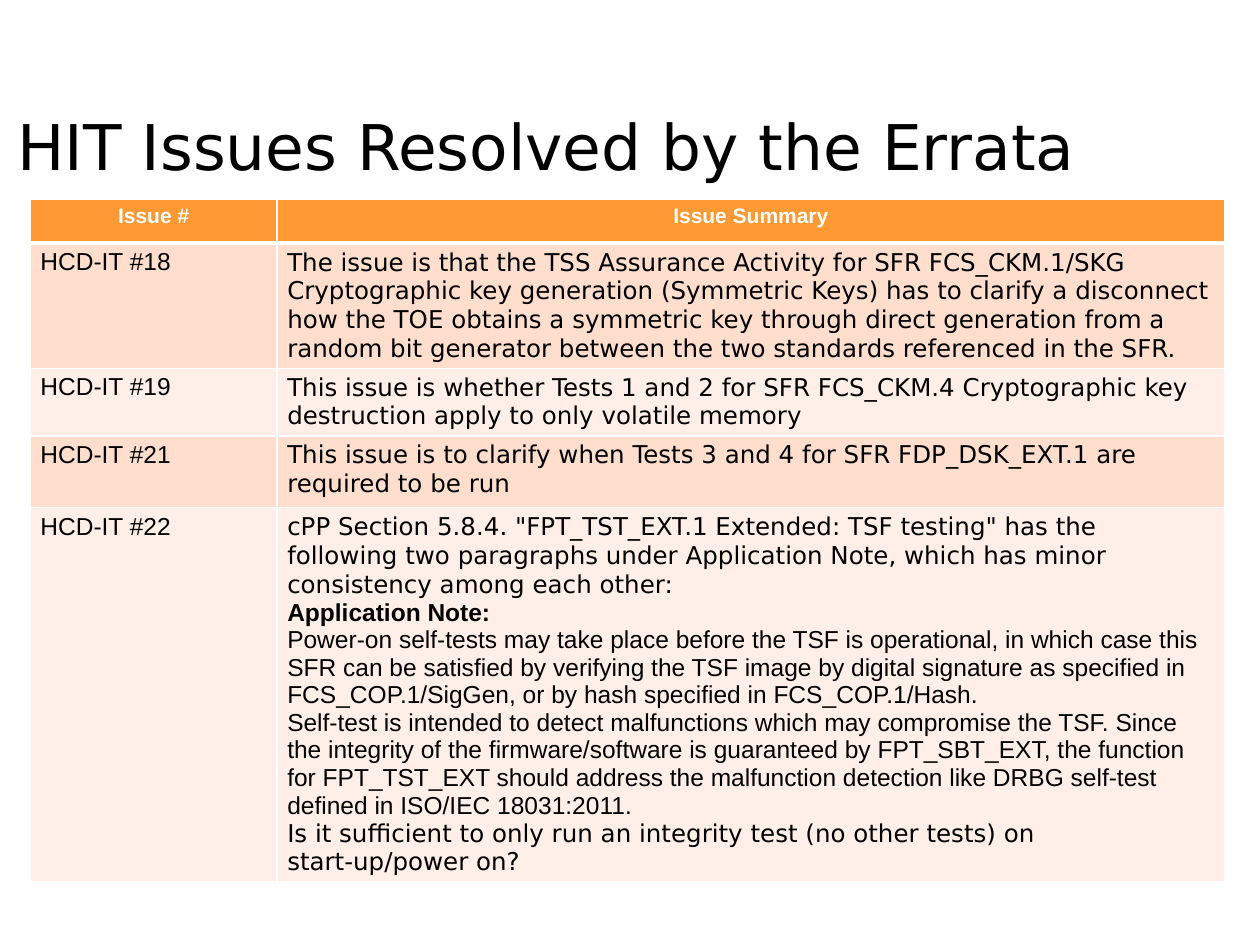
from lxml import etree
from pptx import Presentation
from pptx.dml.color import RGBColor
from pptx.enum import text as t
from pptx.oxml import ns
from pptx.util import Inches, Pt

COLORS = {"header": "FF9933", "odd": "FFDECE", "even": "FFEFE8",
          "white": "FFFFFF", "black": "000000"}
SANS, ARIAL = "DejaVu Sans", "Arial"

TITLE = "HIT Issues Resolved by the Errata"
HEADINGS = ["Issue #", "Issue Summary"]
ISSUES = [
    ("HCD-IT #18", [
        ("The issue is that the TSS Assurance Activity for SFR FCS_CKM.1/SKG Cryptographic key "
         "generation (Symmetric Keys) has to clarify a disconnect how the TOE obtains a symmetric "
         "key through direct generation from a random bit generator between the two standards "
         "referenced in the SFR.", SANS)]),
    ("HCD-IT #19", [
        ("This issue is whether Tests 1 and 2 for SFR FCS_CKM.4 Cryptographic key destruction "
         "apply to only volatile memory", SANS)]),
    ("HCD-IT #21", [
        ("This issue is to clarify when Tests 3 and 4 for SFR FDP_DSK_EXT.1 are required to be "
         "run", SANS)]),
    ("HCD-IT #22", [
        ('cPP Section 5.8.4. "FPT_TST_EXT.1 Extended: TSF testing" has the following two '
         "paragraphs under Application Note, which has minor consistency among each other:", SANS),
        ("Power-on self-tests may take place before the TSF is operational, in which case this "
         "SFR can be satisfied by verifying the TSF image by digital signature as specified in "
         "FCS_COP.1/SigGen, or by hash specified in FCS_COP.1/Hash.", ARIAL, "Application Note:"),
        ("Self-test is intended to detect malfunctions which may compromise the TSF. Since the "
         "integrity of the firmware/software is guaranteed by FPT_SBT_EXT, the function for "
         "FPT_TST_EXT should address the malfunction detection like DRBG self-test defined in "
         "ISO/IEC 18031:2011.", ARIAL),
        ("Is it sufficient to only run an integrity test (no other tests) on start-up/power on?",
         SANS)]),
]
COLUMN_WIDTHS = [1.96, 7.52]
ROW_HEIGHTS = [0.35, 0.95, 0.53, 0.57, 2.96]


def write(paragraph, words, font=ARIAL, size=14, color="black", bold=False,
          align=t.PP_ALIGN.LEFT):
    paragraph.alignment = align
    run = paragraph.add_run()
    run.text = words
    run.font.name, run.font.size, run.font.bold = font, Pt(size), bold
    run.font.color.rgb = RGBColor.from_string(COLORS[color])


def format_cell(cell, fill, bottom=1, top=1):
    cell.margin_left = cell.margin_right = Inches(0.08)
    cell.margin_top = cell.margin_bottom = Inches(0.04)
    properties = cell._tc.get_or_add_tcPr()
    for side, width in (("L", 1), ("R", 1), ("T", top), ("B", bottom)):
        border = etree.SubElement(properties, ns.qn(f"a:ln{side}"), w=str(Pt(width)))
        solid = etree.SubElement(border, ns.qn("a:solidFill"))
        etree.SubElement(solid, ns.qn("a:srgbClr"), val=COLORS["white"])
    cell.fill.solid()
    cell.fill.fore_color.rgb = RGBColor.from_string(COLORS[fill])


deck = Presentation()
deck.slide_width, deck.slide_height = Inches(10), Inches(7.5)
slide = deck.slides.add_slide(deck.slide_layouts[5])

title = slide.shapes.title
title.left, title.top, title.width, title.height = map(Inches, (0.04, 0.68, 12, 0.83))
title_frame = title.text_frame
title_frame.auto_size = t.MSO_AUTO_SIZE.NONE
title_frame.vertical_anchor = t.MSO_ANCHOR.BOTTOM
title_frame.margin_left = title_frame.margin_right = Inches(0.1)
title_frame.margin_top = title_frame.margin_bottom = Inches(0.06)
write(title_frame.paragraphs[0], TITLE, font=SANS, size=36)

issues = slide.shapes.add_table(
    len(ROW_HEIGHTS), len(COLUMN_WIDTHS), Inches(0.24), Inches(1.58),
    Inches(sum(COLUMN_WIDTHS)), Inches(sum(ROW_HEIGHTS))).table
for column, width in zip(issues.columns, COLUMN_WIDTHS):
    column.width = Inches(width)
for row, height in zip(issues.rows, ROW_HEIGHTS):
    row.height = Inches(height)

for column, heading in enumerate(HEADINGS):
    cell = issues.cell(0, column)
    format_cell(cell, "header", bottom=3)
    write(cell.text_frame.paragraphs[0], heading, size=12, color="white", bold=True,
          align=t.PP_ALIGN.CENTER)

for row, (number, summary) in enumerate(ISSUES, start=1):
    number_cell, summary_cell = issues.cell(row, 0), issues.cell(row, 1)
    for cell in (number_cell, summary_cell):
        format_cell(cell, "odd" if row % 2 else "even", top=3 if row == 1 else 1)
    write(number_cell.text_frame.paragraphs[0], number)
    frame = summary_cell.text_frame
    for index, (words, font, *lead) in enumerate(summary):
        paragraph = frame.add_paragraph() if index else frame.paragraphs[0]
        for label in lead:
            write(paragraph, label, font=font, bold=True)
            paragraph.add_line_break()
        write(paragraph, words, font=font)

deck.save("out.pptx")
